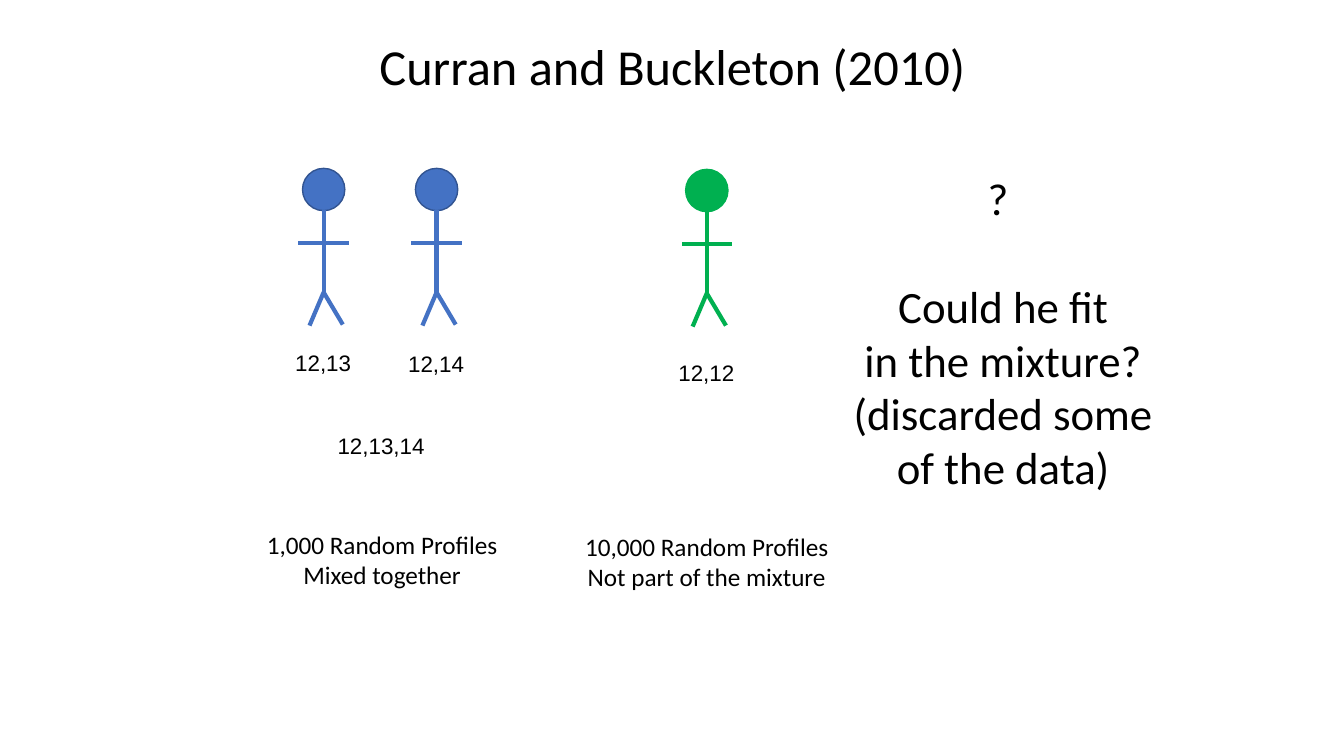
from lxml import etree
from pptx import Presentation
from pptx.dml.color import RGBColor
from pptx.enum.shapes import MSO_CONNECTOR, MSO_SHAPE
from pptx.enum.text import MSO_ANCHOR, MSO_AUTO_SIZE, PP_ALIGN
from pptx.oxml.ns import qn
from pptx.util import Inches, Pt

STRAIGHT = MSO_CONNECTOR.STRAIGHT
OVAL = MSO_SHAPE.OVAL
TOP = MSO_ANCHOR.TOP
FIT_SHAPE = MSO_AUTO_SIZE.SHAPE_TO_FIT_TEXT
LEFT, CENTER = PP_ALIGN.LEFT, PP_ALIGN.CENTER

BLUE, DARK_BLUE, GREEN, BLACK = "4472C4", "325491", "00B050", "000000"
HEAD = 0.42
LIMBS = [
    (0, 0.41, 0, 1.25),
    (0.25, 0.74, -0.25, 0.74),
    (0, 1.23, -0.14, 1.56),
    (0, 1.23, 0.19, 1.55),
]


def rgb(value):
    return RGBColor.from_string(value)


def add_limb(shapes, x1, y1, x2, y2, color):
    line = shapes.add_connector(STRAIGHT, Inches(x1), Inches(y1), Inches(x2), Inches(y2))
    line.line.color.rgb = rgb(color)
    line.line.width = Pt(3)
    etree.SubElement(line._element.spPr, qn("a:effectLst"))


def add_person(s, x, y, color, outline):
    shapes = s.shapes.add_group_shape().shapes
    head = shapes.add_shape(OVAL, Inches(x), Inches(y), Inches(HEAD), Inches(HEAD))
    head.shadow.inherit = False
    head.fill.solid()
    head.fill.fore_color.rgb = rgb(color)
    head.line.color.rgb = rgb(outline)
    head.line.width = Pt(1)
    center = x + HEAD / 2
    for x1, y1, x2, y2 in LIMBS:
        add_limb(shapes, center + x1, y + y1, center + x2, y + y2, color)


def add_text(s, x, y, w, h, text, size, font="Calibri", align=CENTER, wrap=False):
    tf = s.shapes.add_textbox(Inches(x), Inches(y), Inches(w), Inches(h)).text_frame
    tf.word_wrap = wrap
    tf.vertical_anchor = TOP
    if not wrap:
        tf.auto_size = FIT_SHAPE
    tf.text = text
    for p in tf.paragraphs:
        p.alignment = align
        for r in p.runs:
            r.font.name = font
            r.font.size = Pt(size)
            r.font.color.rgb = rgb(BLACK)
    return tf


def add_alleles(s, x, y, w, text):
    add_text(s, x, y, w, 0.37, text, 16, "Arial", LEFT)


def main():
    prs = Presentation()
    prs.slide_width, prs.slide_height = Inches(13.33), Inches(7.5)
    s = prs.slides.add_slide(prs.slide_layouts[6])

    add_text(s, 2.17, 0.3, 9, 1.25, "Curran and Buckleton (2010)", 36, wrap=True)

    add_person(s, 3, 1.67, BLUE, DARK_BLUE)
    add_person(s, 4.12, 1.67, BLUE, DARK_BLUE)
    add_person(s, 6.8, 1.68, GREEN, GREEN)

    add_alleles(s, 2.83, 3.41, 0.76, "12,13")
    add_alleles(s, 3.95, 3.42, 0.76, "12,14")
    add_alleles(s, 3.25, 4.24, 1.07, "12,13,14")
    add_alleles(s, 6.63, 3.51, 0.76, "12,12")

    add_text(s, 2.53, 5.2, 2.52, 0.71, "1,000 Random Profiles\nMixed together", 18)
    add_text(s, 5.69, 5.22, 2.64, 0.71, "10,000 Random Profiles\nNot part of the mixture", 18)

    question = "? \nCould he fit\nin the mixture?\n(discarded some\nof the data)"
    tf = add_text(s, 8.35, 1.64, 3.2, 3.33, question, 32)
    tf.paragraphs[1].space_before = Pt(39)

    prs.save("out.pptx")


if __name__ == "__main__":
    main()
